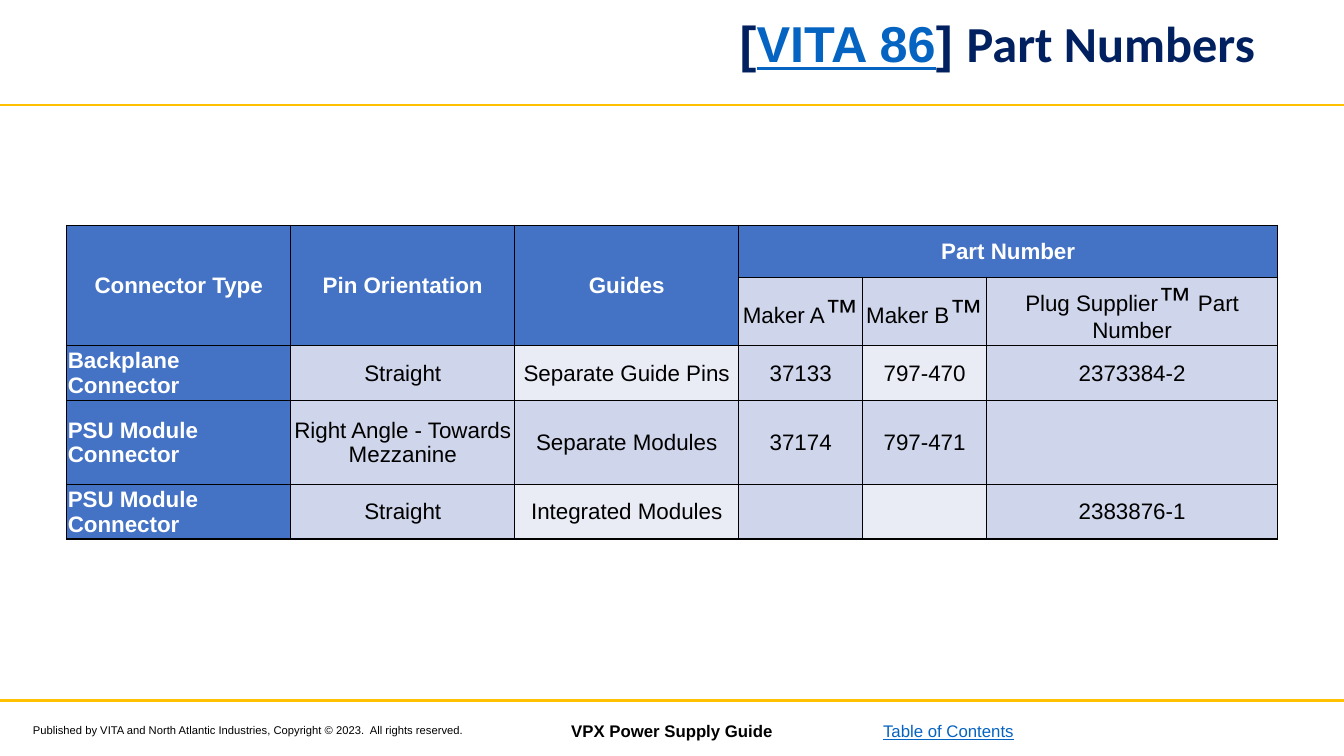
from dataclasses import dataclass, replace

from lxml.etree import SubElement
from pptx import Presentation
from pptx.dml.color import RGBColor
from pptx.enum.shapes import MSO_CONNECTOR
from pptx.enum.text import MSO_ANCHOR, PP_ALIGN
from pptx.oxml.ns import qn
from pptx.slide import Slide
from pptx.table import _Cell
from pptx.text.text import _Paragraph
from pptx.util import Pt


@dataclass(frozen=True)
class Theme:
    navy: str = "002060"
    link: str = "0563C1"
    gold: str = "FFC000"
    header: str = "4472C4"
    band: str = "CFD5EA"
    light_band: str = "E9EBF5"
    white: str = "FFFFFF"
    black: str = "000000"
    title_size: float = 36
    mark_size: float = 24
    table_size: float = 16
    footer_size: float = 12
    copyright_size: float = 8


THEME = Theme()


@dataclass(frozen=True)
class Style:
    size: float
    color: str = THEME.black
    bold: bool = False
    underline: bool = False
    font: str = "Arial"


@dataclass(frozen=True)
class Footer:
    text: str
    left: float
    top: float
    width: float
    height: float
    style: Style


TITLE = Style(THEME.title_size, THEME.navy, bold=True)
HEADER = Style(THEME.table_size, THEME.white, bold=True)
BODY = Style(THEME.table_size)
MARK = Style(THEME.mark_size)

SLIDE_WIDTH, SLIDE_HEIGHT = 960, 540
RULE_TOPS = (74.9, 500.4)
TITLE_RUNS = [
    ("[", TITLE),
    ("VITA 86", replace(TITLE, color=THEME.link, underline=True)),
    ("] ", TITLE),
    ("Part Numbers", replace(TITLE, font="Calibri")),
]
FOOTERS = [
    Footer("Published by VITA and North Atlantic Industries, Copyright © 2023.  All rights reserved.",
           14.4, 513.4, 326, 17, Style(THEME.copyright_size)),
    Footer("VPX Power Supply Guide", 357, 511.2, 246, 22, Style(THEME.footer_size, bold=True)),
    Footer("Table of Contents", 623.5, 511.2, 108, 22,
           Style(THEME.footer_size, THEME.link, underline=True)),
]

COLUMN_WIDTHS = (160, 160, 160, 88.5, 88.5, 208)
ROW_HEIGHTS = (37, 30, 30, 60, 30)
ROWS = [
    ("Connector Type", "Pin Orientation", "Guides", "Part Number", "", ""),
    ("", "", "", "Maker A™", "Maker B™", "Plug Supplier™ Part Number"),
    ("Backplane Connector", "Straight", "Separate Guide Pins", "37133", "797-470", "2373384-2"),
    ("PSU Module Connector", "Right Angle - Towards Mezzanine", "Separate Modules",
     "37174", "797-471", ""),
    ("PSU Module Connector", "Straight", "Integrated Modules", "", "", "2383876-1"),
]
MERGES = [((0, 0), (1, 0)), ((0, 1), (1, 1)), ((0, 2), (1, 2)), ((0, 3), (0, 5))]
LIGHT_ROWS, LIGHT_COLUMNS = (2, 4), (2, 4)


def write_runs(paragraph: _Paragraph, runs: list[tuple[str, Style]], align: PP_ALIGN) -> None:
    paragraph.alignment = align
    for text, style in runs:
        run = paragraph.add_run()
        run.text = text
        font = run.font
        font.name, font.size = style.font, Pt(style.size)
        font.bold, font.underline = style.bold, style.underline
        font.color.rgb = RGBColor.from_string(style.color)


def add_title(slide: Slide) -> None:
    title = slide.shapes.title
    title.left, title.top, title.width, title.height = Pt(263.5), Pt(12.2), Pt(648), Pt(42)
    frame = title.text_frame
    frame.word_wrap = True
    frame.vertical_anchor = MSO_ANCHOR.MIDDLE
    frame.margin_right = Pt(15)
    paragraph = frame.paragraphs[0]
    paragraph.line_spacing = 0.9
    write_runs(paragraph, TITLE_RUNS, PP_ALIGN.RIGHT)


def add_rule(slide: Slide, top: float) -> None:
    rule = slide.shapes.add_connector(MSO_CONNECTOR.STRAIGHT, 0, Pt(top), Pt(SLIDE_WIDTH), Pt(top))
    rule.line.color.rgb = RGBColor.from_string(THEME.gold)
    rule.line.width = Pt(1.75)
    SubElement(rule._element.spPr, qn("a:effectLst"))


def add_footer(slide: Slide, footer: Footer) -> None:
    box = slide.shapes.add_textbox(Pt(footer.left), Pt(footer.top), Pt(footer.width), Pt(footer.height))
    box.text_frame.word_wrap = True
    write_runs(box.text_frame.paragraphs[0], [(footer.text, footer.style)], PP_ALIGN.CENTER)


def add_borders(cell: _Cell) -> None:
    properties = cell._tc.get_or_add_tcPr()
    for side in ("a:lnL", "a:lnR", "a:lnT", "a:lnB"):
        line = SubElement(properties, qn(side), w=str(Pt(1)))
        fill = SubElement(line, qn("a:solidFill"))
        SubElement(fill, qn("a:srgbClr"), val=THEME.black)


def cell_runs(text: str, style: Style) -> list[tuple[str, Style]]:
    name, mark, rest = text.partition("™")
    parts = [(name, style), (mark, MARK), (rest, style)]
    return [part for part in parts if part[0]]


def format_cell(cell: _Cell, row: int, column: int) -> None:
    is_header = row == 0 or column == 0 or (row == 1 and column < 3)
    if is_header:
        color = THEME.header
    elif row in LIGHT_ROWS and column in LIGHT_COLUMNS:
        color = THEME.light_band
    else:
        color = THEME.band
    add_borders(cell)
    cell.fill.solid()
    cell.fill.fore_color.rgb = RGBColor.from_string(color)
    cell.margin_left = cell.margin_right = cell.margin_top = Pt(0.75)
    cell.margin_bottom = 0
    cell.vertical_anchor = MSO_ANCHOR.MIDDLE
    style = HEADER if is_header else BODY
    paragraph = cell.text_frame.paragraphs[0]
    paragraph.font.size = Pt(style.size)
    align = PP_ALIGN.LEFT if column == 0 and row > 1 else PP_ALIGN.CENTER
    write_runs(paragraph, cell_runs(ROWS[row][column], style), align)


def add_part_table(slide: Slide) -> None:
    table = slide.shapes.add_table(len(ROWS), len(COLUMN_WIDTHS), Pt(47.7), Pt(161),
                                   Pt(sum(COLUMN_WIDTHS)), Pt(sum(ROW_HEIGHTS))).table
    for column, width in zip(table.columns, COLUMN_WIDTHS):
        column.width = Pt(width)
    for row, height in zip(table.rows, ROW_HEIGHTS):
        row.height = Pt(height)
    for row_index in range(len(ROWS)):
        for column_index in range(len(COLUMN_WIDTHS)):
            format_cell(table.cell(row_index, column_index), row_index, column_index)
    for first, last in MERGES:
        table.cell(*first).merge(table.cell(*last))


def main() -> None:
    presentation = Presentation()
    presentation.slide_width, presentation.slide_height = Pt(SLIDE_WIDTH), Pt(SLIDE_HEIGHT)
    slide = presentation.slides.add_slide(presentation.slide_layouts[5])

    # Footer texts and gold rules
    for footer in FOOTERS:
        add_footer(slide, footer)
    for top in RULE_TOPS:
        add_rule(slide, top)

    # Title and part number table
    add_title(slide)
    add_part_table(slide)
    presentation.save("out.pptx")


if __name__ == "__main__":
    main()
